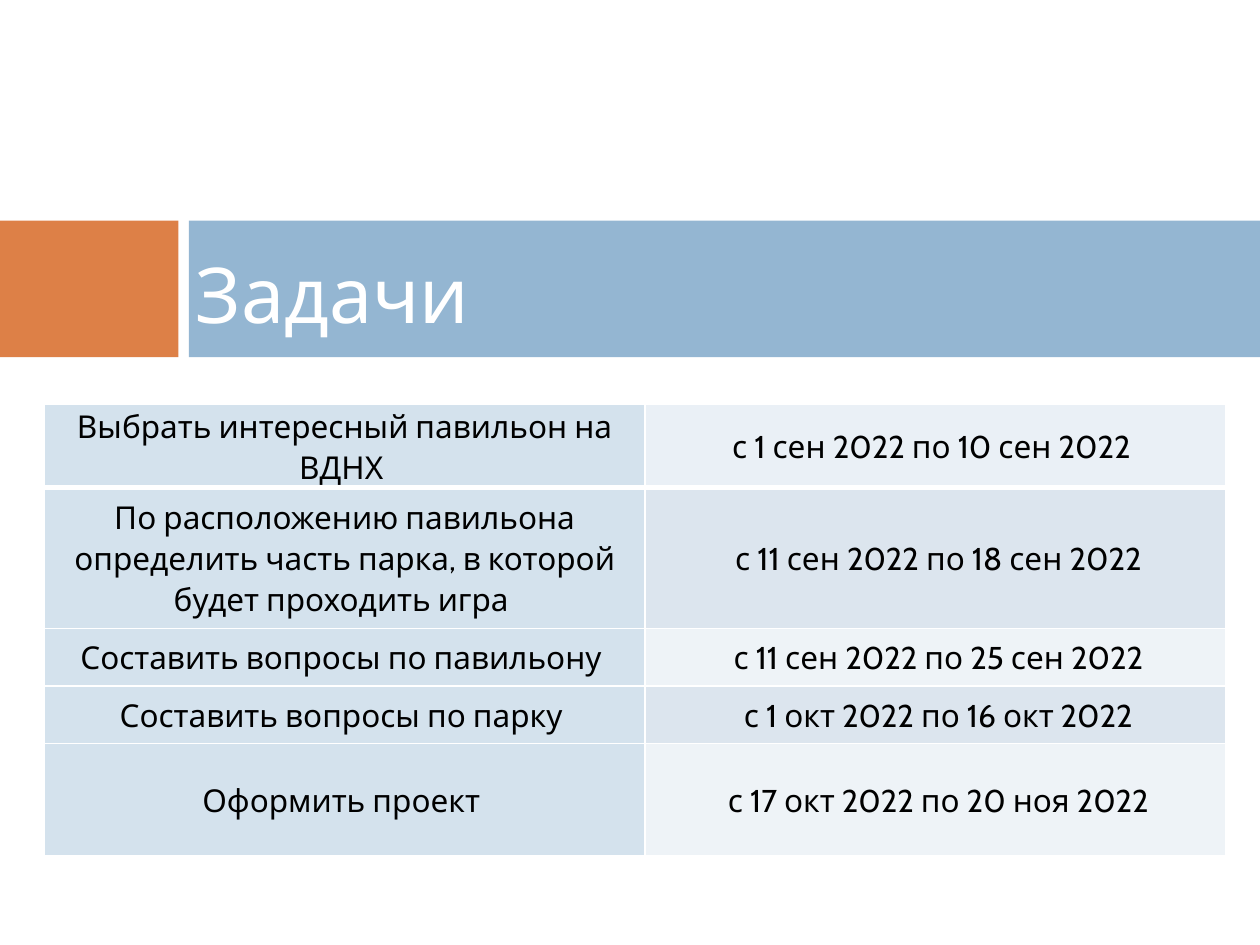
from lxml.etree import SubElement
from pptx import Presentation
from pptx.dml.color import RGBColor
from pptx.enum.shapes import MSO_SHAPE
from pptx.enum.text import MSO_ANCHOR, PP_ALIGN
from pptx.oxml.ns import qn
from pptx.util import Cm, Pt


def color(value):
    return RGBColor.from_string(value)


class Deck:
    font = "Cabin"
    white = "FFFFFF"
    black = "000000"

    def __init__(self, prs):
        self.slide = prs.slides.add_slide(prs.slide_layouts[6])

    def style(self, p, size, hex_color):
        for r in p.runs:
            r.font.name = self.font
            r.font.size = Pt(size)
            r.font.color.rgb = color(hex_color)

    def bar(self, x, y, w, h, fill):
        sp = self.slide.shapes.add_shape(MSO_SHAPE.RECTANGLE, Cm(x), Cm(y), Cm(w), Cm(h))
        sp.shadow.inherit = False
        sp.fill.solid()
        sp.fill.fore_color.rgb = color(fill)
        sp.line.fill.background()

    def title(self, x, y, w, h, text):
        tf = self.slide.shapes.add_textbox(Cm(x), Cm(y), Cm(w), Cm(h)).text_frame
        tf.word_wrap = True
        tf.vertical_anchor = MSO_ANCHOR.MIDDLE
        tf.text = text
        self.style(tf.paragraphs[0], 44, self.white)

    def borders(self, cell, bottom):
        tc_pr = cell._tc.get_or_add_tcPr()
        for side, width in (("L", 1), ("R", 1), ("T", 1), ("B", bottom)):
            ln = SubElement(tc_pr, qn(f"a:ln{side}"), w=str(Pt(width)))
            fill = SubElement(ln, qn("a:solidFill"))
            SubElement(fill, qn("a:srgbClr"), val=self.white)

    def cell(self, cell, text, fill, indent, bottom):
        self.borders(cell, bottom)
        cell.fill.solid()
        cell.fill.fore_color.rgb = color(fill)
        cell.vertical_anchor = MSO_ANCHOR.MIDDLE
        cell.margin_right = cell.margin_top = cell.margin_bottom = Cm(0.03)
        cell.margin_left = Cm(0.03 + indent)
        p = cell.text_frame.paragraphs[0]
        p.text = text + " "
        p.alignment = PP_ALIGN.CENTER
        p.line_spacing = 1.07
        self.style(p, 18, self.black)

    def table(self, x, y, widths, heights, rows, task_fill, date_fills):
        table = self.slide.shapes.add_table(
            len(rows), len(widths), Cm(x), Cm(y), Cm(sum(widths)), Cm(sum(heights))
        ).table
        for column, width in zip(table.columns, widths):
            column.width = Cm(width)
        for i, (task, dates) in enumerate(rows):
            table.rows[i].height = Cm(heights[i])
            bottom = 1 if i else 3
            self.cell(table.cell(i, 0), task, task_fill, 0, bottom)
            self.cell(table.cell(i, 1), dates, date_fills[i], 0.28 if i else 0, bottom)


def main():
    prs = Presentation()
    prs.slide_width, prs.slide_height = Cm(25.4), Cm(19.05)
    s = Deck(prs)

    # Title band
    s.bar(0, 4.45, 3.6, 2.75, "DD8047")
    s.bar(3.81, 4.45, 21.59, 2.75, "94B6D2")
    s.title(3.7, 4.52, 21.16, 2.75, "Задачи")

    # Schedule of tasks
    rows = [
        ("Выбрать интересный павильон на ВДНХ", "с 1 сен 2022 по 10 сен 2022"),
        ("По расположению павильона определить часть парка, в которой будет проходить игра",
         "с 11 сен 2022 по 18 сен 2022"),
        ("Составить вопросы по павильону", "с 11 сен 2022 по 25 сен 2022"),
        ("Составить вопросы по парку", "с 1 окт 2022 по 16 окт 2022"),
        ("Оформить проект", "с 17 окт 2022 по 20 ноя 2022"),
    ]
    even, odd = "DCE5EE", "EEF3F7"
    s.table(0.9, 8.14, [12.1, 11.7], [1.6, 2.84, 1.16, 1.16, 2.26], rows,
            "D4E2ED", ["EAF0F6", even, odd, even, odd])

    prs.save("out.pptx")


if __name__ == "__main__":
    main()
